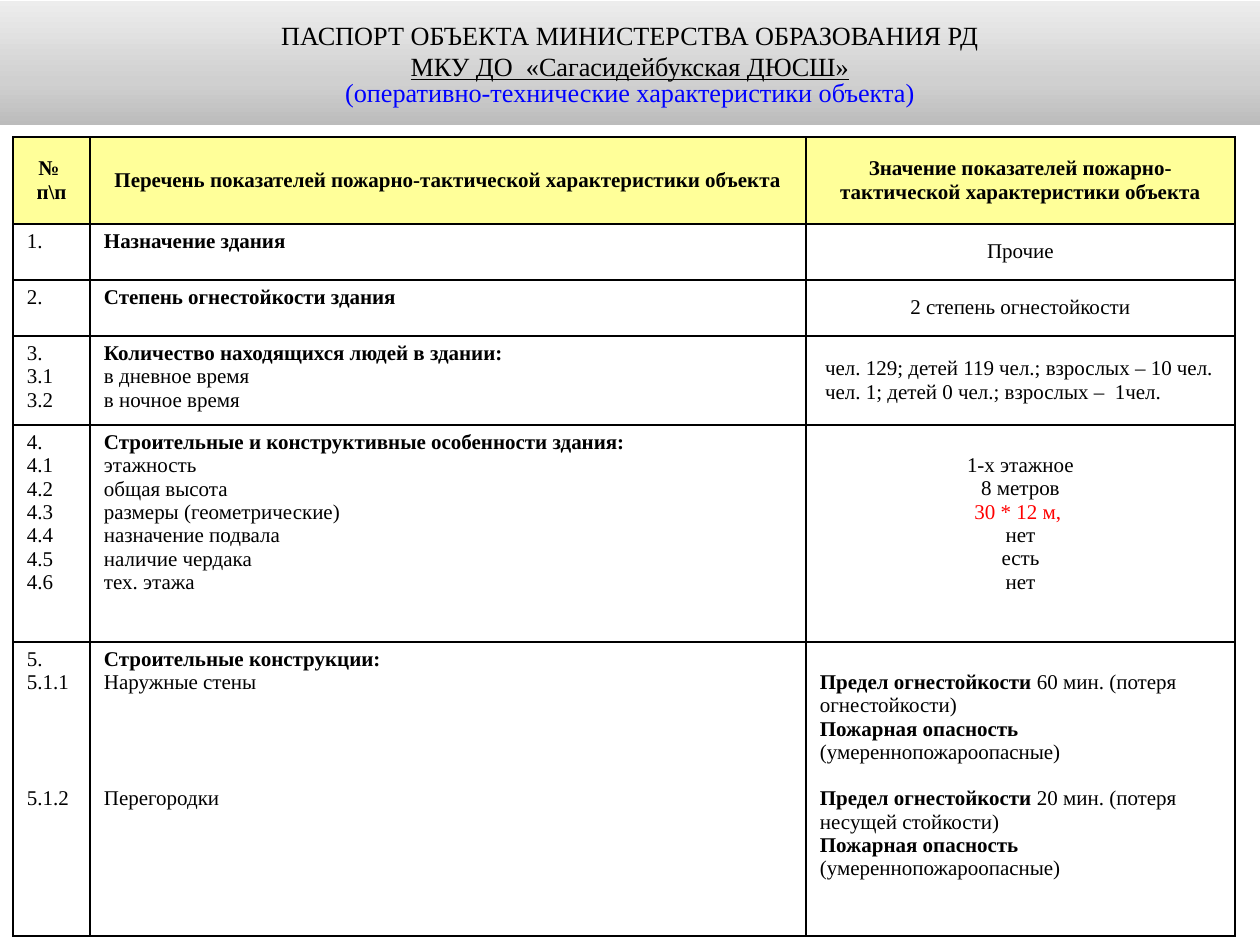
from dataclasses import dataclass

from lxml import etree
from pptx import Presentation
from pptx.dml.color import RGBColor
from pptx.enum.text import MSO_ANCHOR, MSO_AUTO_SIZE, PP_ALIGN
from pptx.oxml.ns import qn
from pptx.util import Emu, Inches, Pt

LEFT, CENTER = PP_ALIGN.LEFT, PP_ALIGN.CENTER
TOP, MIDDLE = MSO_ANCHOR.TOP, MSO_ANCHOR.MIDDLE
NO_AUTOFIT = MSO_AUTO_SIZE.NONE
FONT = "Times New Roman"
COLORS = {
    "text": "000000", "accent": "0000FF", "alert": "FF0000",
    "header": "FFFF99", "cell": "FFFFFF", "border": "000000",
}
BAND_STOPS = [(0, "BCBCBC"), (35, "D0D0D0"), (100, "EDEDED")]
COLUMNS = [77, 716, 429]
ROWS = [87, 56, 56, 89, 217, 294]
LINE_PX = 23
PAD_X, PAD_Y = 14, 6


@dataclass
class Line:
    text: str = ""
    bold: str = ""
    color: str = "text"
    gap: int = 0
    underline: bool = False
    spacing: float = 1.0


@dataclass
class Cell:
    lines: list[Line]
    align: PP_ALIGN = LEFT
    anchor: MSO_ANCHOR = TOP
    lead: int = 0
    fill: str = "cell"


def px(n: int) -> Emu:
    return Emu(round(n * 914400 / 126))


def plain(*texts: str) -> list[Line]:
    return [Line(t) for t in texts]


def header(*texts: str) -> Cell:
    return Cell([Line(bold=t) for t in texts], CENTER, MIDDLE, fill="header")


def section(title: str, *items: str) -> Cell:
    return Cell([Line(bold=title), *plain(*items)])


def write_lines(tf, lines: list[Line], align: PP_ALIGN, size: int) -> None:
    for i, line in enumerate(lines):
        p = tf.paragraphs[0] if i == 0 else tf.add_paragraph()
        p.alignment = align
        p.line_spacing = line.spacing
        p.space_before = px(line.gap * LINE_PX)
        for text, bold in ((line.bold, True), (line.text, False)):
            if text:
                r = p.add_run()
                r.text = text
                r.font.name = FONT
                r.font.size = Pt(size)
                r.font.bold = bold
                r.font.underline = line.underline
                r.font.color.rgb = RGBColor.from_string(COLORS[line.color])


def fill_band(sp) -> None:
    sp.fill.gradient()
    sp.fill.gradient_angle = 90
    stops = sp._element.spPr.find(qn("a:gradFill")).find(qn("a:gsLst"))
    for stop in list(stops):
        stops.remove(stop)
    for position, color in BAND_STOPS:
        stop = etree.SubElement(stops, qn("a:gs"), pos=str(position * 1000))
        etree.SubElement(stop, qn("a:srgbClr"), val=color)


def add_borders(cell) -> None:
    props = cell._tc.get_or_add_tcPr()
    for side in ("lnL", "lnR", "lnT", "lnB"):
        ln = etree.SubElement(props, qn(f"a:{side}"), w=str(Pt(1)))
        fill = etree.SubElement(ln, qn("a:solidFill"))
        etree.SubElement(fill, qn("a:srgbClr"), val=COLORS["border"])


def draw_cell(cell, content: Cell) -> None:
    add_borders(cell)
    cell.fill.solid()
    cell.fill.fore_color.rgb = RGBColor.from_string(COLORS[content.fill])
    cell.margin_left = cell.margin_right = px(PAD_X)
    cell.margin_top = px(PAD_Y + content.lead * LINE_PX)
    cell.margin_bottom = px(PAD_Y)
    cell.vertical_anchor = content.anchor
    write_lines(cell.text_frame, content.lines, content.align, 12)


def draw_title(sp, lines: list[Line]) -> None:
    sp.left, sp.top, sp.width, sp.height = px(0), px(1), px(1260), px(124)
    fill_band(sp)
    tf = sp.text_frame
    tf.auto_size = NO_AUTOFIT
    tf.word_wrap = True
    tf.vertical_anchor = MIDDLE
    write_lines(tf, lines, CENTER, 15)


def draw_table(slide, content: list[list[Cell]]) -> None:
    frame = slide.shapes.add_table(len(ROWS), len(COLUMNS), px(13), px(137),
                                   px(sum(COLUMNS)), px(sum(ROWS)))
    table = frame.table
    table.first_row = table.horz_banding = False
    for column, width in zip(table.columns, COLUMNS):
        column.width = px(width)
    for row, height, cells in zip(table.rows, ROWS, content):
        row.height = px(height)
        for cell, item in zip(row.cells, cells):
            draw_cell(cell, item)


TITLE = [
    Line("ПАСПОРТ ОБЪЕКТА МИНИСТЕРСТВА ОБРАЗОВАНИЯ РД"),
    Line("МКУ ДО  «Сагасидейбукская ДЮСШ»", underline=True),
    Line("(оперативно-технические характеристики объекта)", color="accent", spacing=0.8),
]
LIMIT, DANGER = "Предел огнестойкости ", "Пожарная опасность "
HAZARD = "(умереннопожароопасные)"
TABLE = [
    [header("№ ", "п\\п"),
     header("Перечень показателей пожарно-тактической характеристики объекта"),
     header("Значение показателей пожарно-тактической характеристики объекта")],
    [Cell(plain("1.")), section("Назначение здания"),
     Cell(plain("Прочие"), CENTER, MIDDLE)],
    [Cell(plain("2.")), section("Степень огнестойкости здания"),
     Cell(plain("2 степень огнестойкости"), CENTER, MIDDLE)],
    [Cell(plain("3.", "3.1", "3.2")),
     section("Количество находящихся людей в здании:", "в дневное время", "в ночное время"),
     Cell(plain(" чел. 129; детей 119 чел.; взрослых – 10 чел.",
                " чел. 1; детей 0 чел.; взрослых –  1чел."), anchor=MIDDLE)],
    [Cell(plain("4.", *(f"4.{n}" for n in range(1, 7)))),
     section("Строительные и конструктивные особенности здания:", "этажность",
             "общая высота", "размеры (геометрические)", "назначение подвала",
             "наличие чердака", "тех. этажа"),
     Cell([*plain("1-х этажное", "8 метров"), Line("30 * 12 м, ", color="alert"),
           *plain("нет", "есть", "нет")], CENTER, lead=1)],
    [Cell([*plain("5.", "5.1.1"), Line("5.1.2", gap=4)]),
     Cell([Line(bold="Строительные конструкции:"), Line("Наружные стены"),
           Line("Перегородки", gap=4)]),
     Cell([Line("60 мин. (потеря огнестойкости)", LIMIT), Line(HAZARD, DANGER),
           Line("20 мин. (потеря несущей стойкости)", LIMIT, gap=1),
           Line(HAZARD, DANGER)], lead=1)],
]


def main() -> None:
    prs = Presentation()
    prs.slide_width, prs.slide_height = Inches(10), Inches(7.5)
    slide = prs.slides.add_slide(prs.slide_layouts[5])
    draw_title(slide.shapes.title, TITLE)
    draw_table(slide, TABLE)
    prs.save("out.pptx")


if __name__ == "__main__":
    main()
